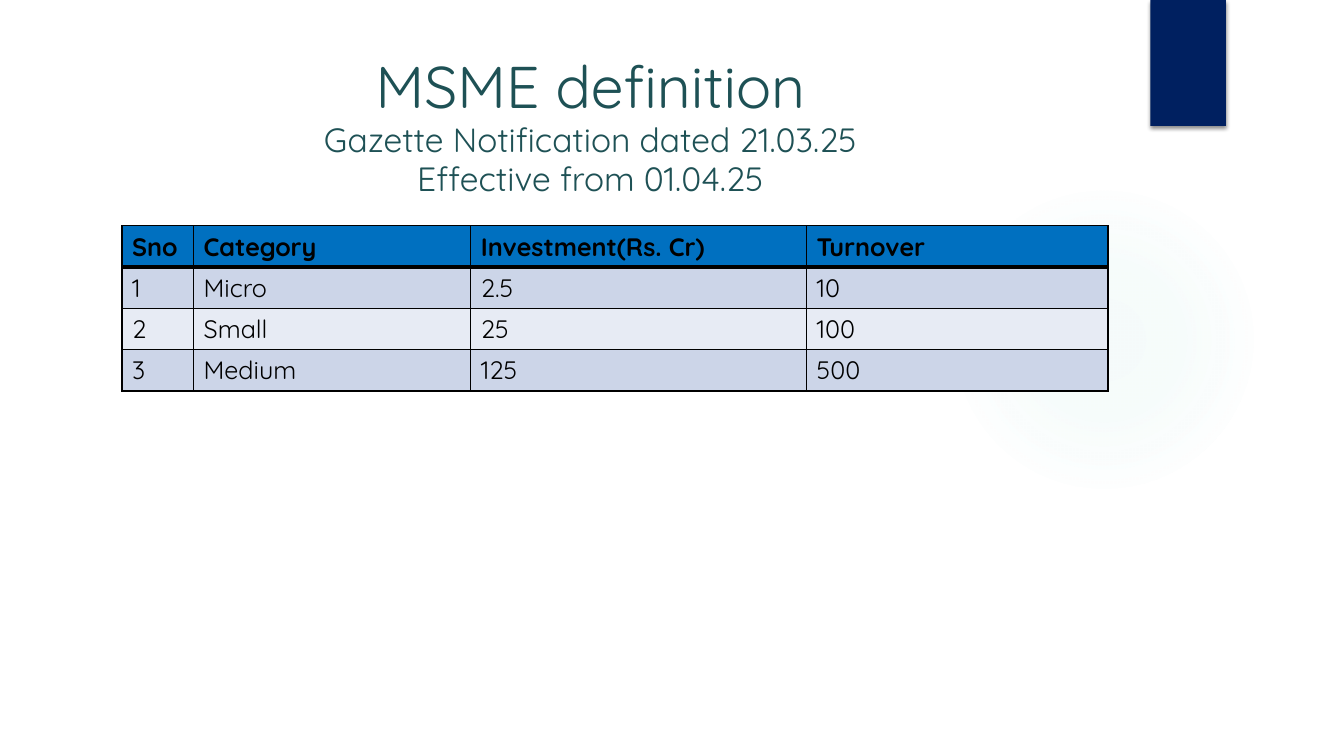
import pptx
import pptx.util
import pptx.dml.color
import pptx.enum.shapes
import pptx.enum.text
import pptx.oxml
import pptx.oxml.ns

# Content
TITLE_LINES = [
    ("MSME definition", 42),
    ("Gazette Notification dated 21.03.25", 24),
    ("Effective from 01.04.25", 24),
]
MSME_ROWS = [
    ("Sno", "Category", "Investment(Rs. Cr)", "Turnover"),
    ("1", "Micro", "2.5", "10"),
    ("2", "Small", "25", "100"),
    ("3", "Medium", "125", "500"),
]

# Look and layout, lengths in inches
FONT = "Quicksand"
TEAL, NAVY, BLACK, GLOW = "1E5155", "002060", "000000", "7CCEC9"
HEADER_FILL, BAND_FILLS = "0070C0", ("CCD5E8", "E7EBF4")
SLIDE_SIZE = (13.33, 7.5)
TITLE_BOX = (0.71, 0.5, 10.29, 1.53)
GLOW_BOX = (9.41, 1.83, 3.08, 3.08)
TAB_BOX = (11.41, 0, 0.75, 1.25)
TABLE_CORNER = (1.21, 2.24)
COLUMN_WIDTHS = (0.71, 2.75, 3.33, 2.99)
ROW_HEIGHT = 0.41
GLOW_STOPS = [(0, 7), (36, 6), (69, 0)]  # position %, opacity %


def inches(lengths):
    return [pptx.util.Inches(length) for length in lengths]


def colour(value):
    return pptx.dml.color.RGBColor.from_string(value)


def xml(tag, body):
    namespace = pptx.oxml.ns.nsdecls("a")
    name = tag.split()[0]
    return pptx.oxml.parse_xml(f"<a:{tag} {namespace}>{body}</a:{name}>")


def style(run, size, value, bold=False):
    run.font.name = FONT
    run.font.size = pptx.util.Pt(size)
    run.font.bold = bold
    run.font.color.rgb = colour(value)


def add_border(cell, side, width):
    line = xml(f'ln{side} w="{pptx.util.Pt(width)}"',
               f'<a:solidFill><a:srgbClr val="{BLACK}"/></a:solidFill>')
    cell._tc.get_or_add_tcPr().append(line)


def add_plain_shape(slide, kind, box):
    shape = slide.shapes.add_shape(kind, *inches(box))
    shape.shadow.inherit = False
    shape.line.fill.background()
    return shape


def add_glow(slide):
    glow = add_plain_shape(slide, pptx.enum.shapes.MSO_SHAPE.OVAL, GLOW_BOX)
    stops = "".join(
        f'<a:gs pos="{position * 1000}"><a:srgbClr val="{GLOW}">'
        f'<a:alpha val="{opacity * 1000}"/></a:srgbClr></a:gs>'
        for position, opacity in GLOW_STOPS)
    gradient = xml("gradFill", f'<a:gsLst>{stops}</a:gsLst><a:path path="circle">'
                   '<a:fillToRect l="50000" t="50000" r="50000" b="50000"/></a:path>')
    glow._element.spPr.find(pptx.oxml.ns.qn("a:prstGeom")).addnext(gradient)


def add_tab(slide):
    tab = add_plain_shape(slide, pptx.enum.shapes.MSO_SHAPE.RECTANGLE, TAB_BOX)
    tab.fill.solid()
    tab.fill.fore_color.rgb = colour(NAVY)
    effects = tab._element.spPr.find(pptx.oxml.ns.qn("a:effectLst"))
    effects.append(xml(
        f'outerShdw blurRad="{pptx.util.Pt(3)}" dist="{pptx.util.Pt(2)}" '
        'dir="5400000" rotWithShape="0"',
        f'<a:srgbClr val="{BLACK}"><a:alpha val="45000"/></a:srgbClr>'))


def add_title(slide):
    frame = slide.shapes.add_textbox(*inches(TITLE_BOX)).text_frame
    frame.word_wrap = True
    frame.vertical_anchor = pptx.enum.text.MSO_ANCHOR.TOP
    heading = frame.paragraphs[0]
    heading.text = "\v".join(text for text, size in TITLE_LINES)
    heading.alignment = pptx.enum.text.PP_ALIGN.CENTER
    heading.line_spacing = 0.95
    for run, (text, size) in zip(heading.runs, TITLE_LINES):
        style(run, size, TEAL)


def add_msme_table(slide):
    size = (sum(COLUMN_WIDTHS), ROW_HEIGHT * len(MSME_ROWS))
    table = slide.shapes.add_table(len(MSME_ROWS), len(COLUMN_WIDTHS),
                                   *inches(TABLE_CORNER + size)).table
    for column, width in zip(table.columns, inches(COLUMN_WIDTHS)):
        column.width = width
    for r, values in enumerate(MSME_ROWS):
        header = r == 0
        table.rows[r].height = pptx.util.Inches(ROW_HEIGHT)
        for c, value in enumerate(values):
            cell = table.cell(r, c)
            cell.text_frame.text = value
            style(cell.text_frame.paragraphs[0].runs[0], 18, BLACK, header)
            # A thick rule parts the header from the first row
            widths = {"L": 1, "R": 1, "T": 3 if r == 1 else 1, "B": 3 if header else 1}
            for side, width in widths.items():
                add_border(cell, side, width)
            cell.fill.solid()
            cell.fill.fore_color.rgb = colour(
                HEADER_FILL if header else BAND_FILLS[(r - 1) % 2])


def main():
    deck = pptx.Presentation()
    deck.slide_width, deck.slide_height = inches(SLIDE_SIZE)
    slide = deck.slides.add_slide(deck.slide_layouts[6])
    add_glow(slide)
    add_tab(slide)
    add_title(slide)
    add_msme_table(slide)
    deck.save("out.pptx")


if __name__ == "__main__":
    main()
